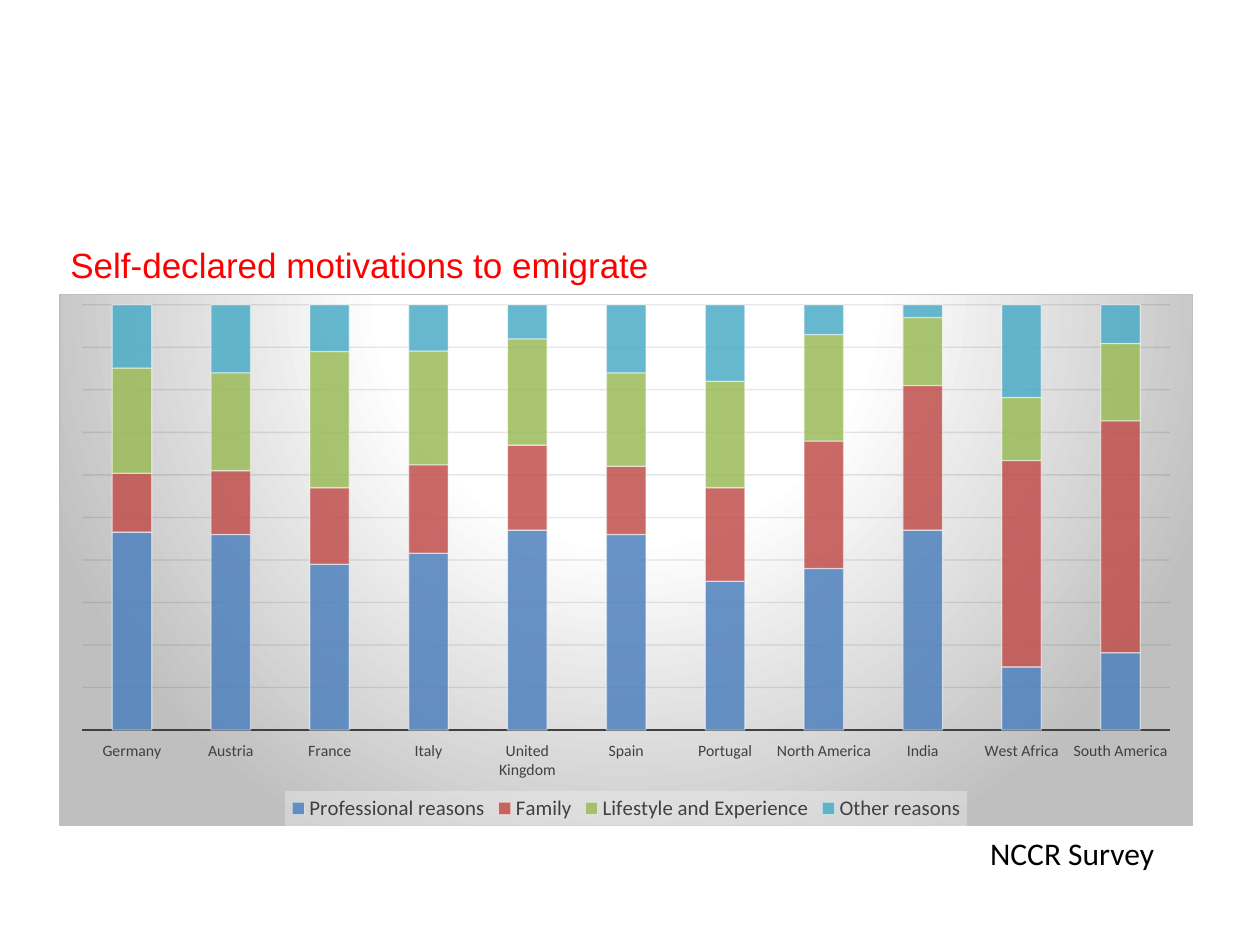
"""Build a slide with a stacked chart of the motivations to emigrate."""
from dataclasses import dataclass

from lxml import etree
from pptx import Presentation
from pptx.chart.chart import Chart
from pptx.chart.data import CategoryChartData
from pptx.dml.color import RGBColor
from pptx.enum.chart import XL_CHART_TYPE, XL_LEGEND_POSITION, XL_TICK_LABEL_POSITION, XL_TICK_MARK
from pptx.enum.text import MSO_AUTO_SIZE
from pptx.oxml import parse_xml
from pptx.oxml.ns import nsdecls, qn
from pptx.slide import Slide
from pptx.util import Inches, Pt

STACKED = XL_CHART_TYPE.COLUMN_STACKED_100
BOTTOM = XL_LEGEND_POSITION.BOTTOM
LOW = XL_TICK_LABEL_POSITION.LOW
NO_TICK = XL_TICK_MARK.NONE
NO_FIT = MSO_AUTO_SIZE.NONE
GROW = MSO_AUTO_SIZE.SHAPE_TO_FIT_TEXT

RED = RGBColor(0xFF, 0x00, 0x00)
BLACK = RGBColor(0x00, 0x00, 0x00)
WHITE = RGBColor(0xFF, 0xFF, 0xFF)
DARK = RGBColor(0x40, 0x40, 0x40)
GRID = RGBColor(0x0D, 0x0D, 0x0D)

PLACES = ("Germany", "Austria", "France", "Italy", "United Kingdom", "Spain",
          "Portugal", "North America", "India", "West Africa", "South America")

BACK = f"""<c:spPr {nsdecls("c", "a")}>
<a:gradFill><a:gsLst>
<a:gs pos="0"><a:srgbClr val="FFFFFF"/></a:gs>
<a:gs pos="39000"><a:srgbClr val="FFFFFF"/></a:gs>
<a:gs pos="100000"><a:srgbClr val="BFBFBF"/></a:gs>
</a:gsLst><a:path path="circle">
<a:fillToRect l="50000" t="-80000" r="50000" b="180000"/>
</a:path></a:gradFill>
<a:ln w="9525"><a:solidFill><a:srgbClr val="BFBFBF"/></a:solidFill></a:ln>
</c:spPr>"""

PANEL = f"""<c:spPr {nsdecls("c", "a")}><a:solidFill><a:srgbClr val="F2F2F2">
<a:alpha val="39000"/></a:srgbClr></a:solidFill></c:spPr>"""

LAYOUT = f"""<c:layout {nsdecls("c")}><c:manualLayout>
<c:layoutTarget val="inner"/><c:xMode val="edge"/><c:yMode val="edge"/>
<c:x val="0.02"/><c:y val="0.02"/><c:w val="0.96"/><c:h val="0.8"/>
</c:manualLayout></c:layout>"""


@dataclass
class Reason:
    """One series of the chart."""
    name: str
    color: RGBColor
    shares: tuple[int, ...]


@dataclass
class Label:
    """One line of text and its box in inches."""
    text: str
    box: tuple[float, float, float, float]
    font: str
    size: int
    color: RGBColor
    wrap: bool
    fit: MSO_AUTO_SIZE


REASONS = (
    Reason("Professional reasons", RGBColor(0x4F, 0x81, 0xBD),
           (47, 46, 39, 42, 47, 46, 35, 38, 47, 15, 18)),
    Reason("Family", RGBColor(0xC0, 0x50, 0x4D),
           (14, 15, 18, 21, 20, 16, 22, 30, 34, 49, 54)),
    Reason("Lifestyle and Experience", RGBColor(0x9B, 0xBB, 0x59),
           (25, 23, 32, 27, 25, 22, 25, 25, 16, 15, 18)),
    Reason("Other reasons", RGBColor(0x4B, 0xAC, 0xC6),
           (15, 16, 11, 11, 8, 16, 18, 7, 3, 22, 9)),
)

TITLE = Label("Self-declared motivations to emigrate", (0.46, 1.88, 9.03, 0.5),
              "Arial", 20, RED, True, NO_FIT)
SOURCE = Label("NCCR Survey", (7.76, 6.57, 1.79, 0.4),
               "Calibri", 18, BLACK, False, GROW)


def add_label(slide: Slide, label: Label) -> None:
    """Draw one line of text."""
    frame = slide.shapes.add_textbox(*map(Inches, label.box)).text_frame
    frame.word_wrap = label.wrap
    frame.auto_size = label.fit
    run = frame.paragraphs[0].add_run()
    run.text = label.text
    run.font.name = label.font
    run.font.size = Pt(label.size)
    run.font.color.rgb = label.color


def set_font(font, size: float, color: RGBColor) -> None:
    """Set the chart font at one size and colour."""
    font.name = "Calibri"
    font.size = Pt(size)
    font.color.rgb = color


def set_line(line, color: RGBColor, width: float) -> None:
    """Set the colour and width of a line."""
    line.color.rgb = color
    line.width = Pt(width)


def fade(chart: Chart, route: str, share: int) -> None:
    """Give the colours found along a route a percentage of opacity."""
    for color in chart.element.xpath(route):
        etree.SubElement(color, qn("a:alpha")).set("val", str(share * 1000))


def style_axes(chart: Chart) -> None:
    """Show the base line, the place names and the faint grid."""
    base = chart.category_axis
    base.major_tick_mark = NO_TICK
    base.minor_tick_mark = NO_TICK
    base.tick_label_position = LOW
    set_font(base.tick_labels.font, 9, DARK)
    set_line(base.format.line, DARK, 1.5)
    scale = chart.value_axis
    scale.visible = False
    scale.has_major_gridlines = True
    set_line(scale.major_gridlines.format.line, GRID, 0.75)
    fade(chart, ".//c:majorGridlines//a:srgbClr", 10)


def style_bars(chart: Chart) -> None:
    """Colour the stacked parts."""
    plot = chart.plots[0]
    plot.gap_width = 150
    plot.overlap = 100
    plot.vary_by_categories = False
    for part, reason in zip(plot.series, REASONS):
        part.format.fill.solid()
        part.format.fill.fore_color.rgb = reason.color
        set_line(part.format.line, WHITE, 0.75)
    fade(chart, ".//c:ser/c:spPr/a:solidFill/a:srgbClr", 85)
    fade(chart, ".//c:ser/c:spPr/a:ln//a:srgbClr", 50)


def style_frame(chart: Chart) -> None:
    """Set the legend, the backdrop and the plot area."""
    chart.has_legend = True
    chart.legend.position = BOTTOM
    chart.legend.include_in_layout = False
    set_font(chart.legend.font, 11.9, DARK)
    root = chart.element
    root.xpath("./c:chart")[0].addnext(parse_xml(BACK))
    root.xpath(".//c:legend/c:overlay")[0].addnext(parse_xml(PANEL))
    area = root.xpath(".//c:plotArea")[0]
    for old in area.xpath("./c:layout"):
        area.remove(old)
    area.insert(0, parse_xml(LAYOUT))


def add_bars(slide: Slide) -> None:
    """Draw the chart of reasons by place."""
    data = CategoryChartData()
    data.categories = PLACES
    for reason in REASONS:
        data.add_series(reason.name, reason.shares)
    box = map(Inches, (0.47, 2.33, 9, 4.23))
    chart = slide.shapes.add_chart(STACKED, *box, data).chart
    chart.has_title = False
    set_font(chart.font, 10, BLACK)
    style_axes(chart)
    style_bars(chart)
    style_frame(chart)


def main() -> None:
    """Build and save the slide."""
    deck = Presentation()
    deck.slide_width = Inches(10)
    deck.slide_height = Inches(7.5)
    slide = deck.slides.add_slide(deck.slide_layouts[6])
    add_label(slide, TITLE)
    add_bars(slide)
    add_label(slide, SOURCE)
    deck.save("out.pptx")


if __name__ == "__main__":
    main()
